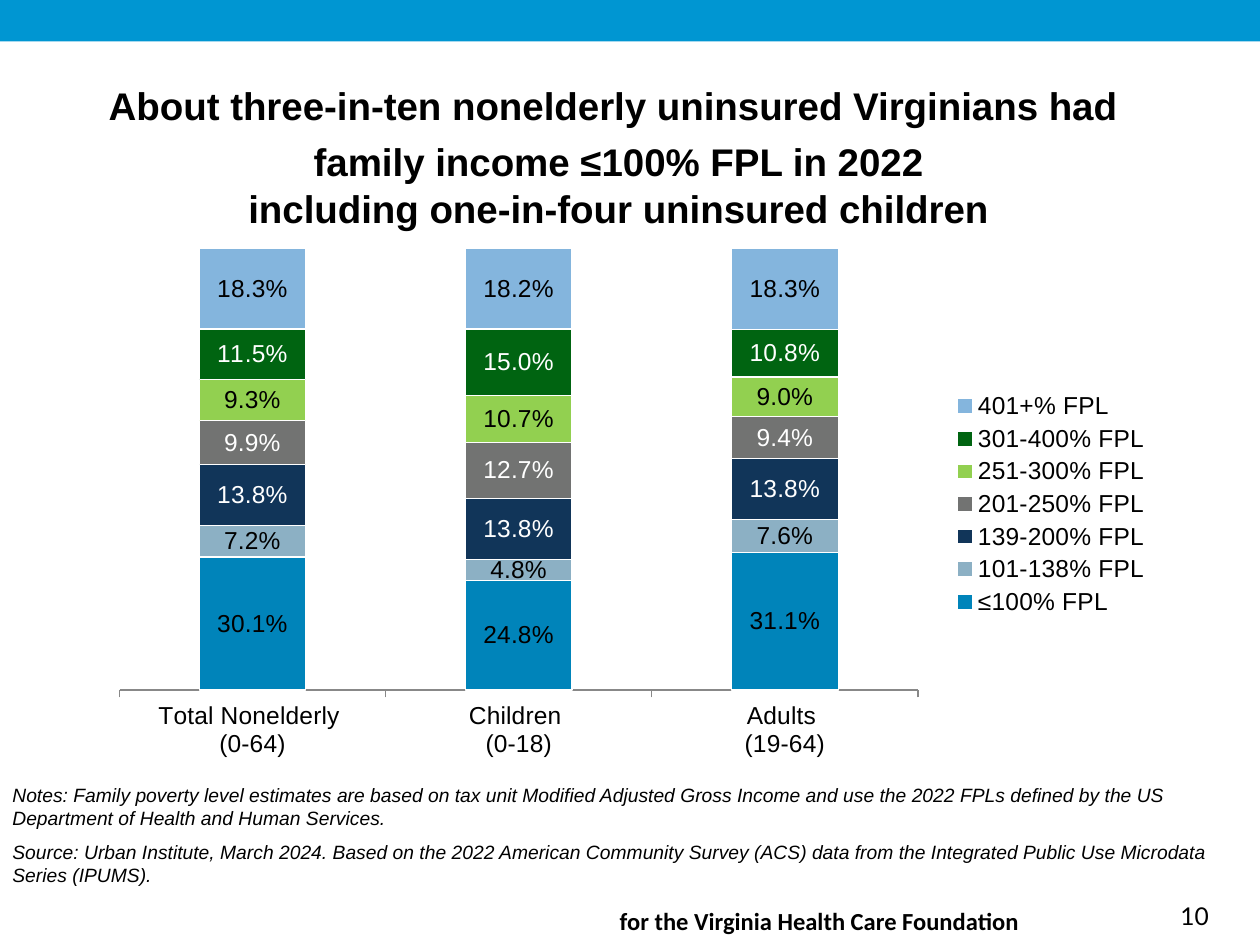
import lxml.etree
import pptx
import pptx.chart.data
import pptx.dml.color
import pptx.enum.chart
import pptx.enum.shapes
import pptx.enum.text
import pptx.oxml.ns
import pptx.util

RGB = pptx.dml.color.RGBColor
BLACK = RGB(0x00, 0x00, 0x00)
WHITE = RGB(0xFF, 0xFF, 0xFF)
BANNER = RGB(0x00, 0x96, 0xD2)
AXIS = RGB(0x88, 0x88, 0x88)
BLUE = RGB(0x00, 0x84, 0xBA)
MIST = RGB(0x8C, 0xB0, 0xC4)
NAVY = RGB(0x11, 0x35, 0x59)
GRAY = RGB(0x72, 0x73, 0x72)
LIME = RGB(0x92, 0xD0, 0x50)
GREEN = RGB(0x00, 0x64, 0x11)
SKY = RGB(0x84, 0xB5, 0xDD)

COLUMNS, ROWS = 100, 75

CATEGORIES = ["Total Nonelderly \n(0-64)", "Children \n(0-18)", "Adults \n(19-64)"]
INCOME_BANDS = [
    ("≤100% FPL", (0.301, 0.248, 0.311), BLUE, BLACK),
    ("101-138% FPL", (0.072, 0.048, 0.076), MIST, BLACK),
    ("139-200% FPL", (0.138, 0.138, 0.138), NAVY, WHITE),
    ("201-250% FPL", (0.099, 0.127, 0.094), GRAY, WHITE),
    ("251-300% FPL", (0.093, 0.107, 0.09), LIME, BLACK),
    ("301-400% FPL", (0.115, 0.15, 0.108), GREEN, WHITE),
    ("401+% FPL", (0.183, 0.182, 0.183), SKY, BLACK),
]


def style_font(font, size=14, name="Arial", color=BLACK, bold=False, italic=False):
    font.size = pptx.util.Pt(size)
    font.name = name
    font.bold = bold
    font.italic = italic
    font.color.rgb = color


def write_text(para, text, align=None, before=0, **font_format):
    para.text = text
    para.alignment = align
    para.space_before = pptx.util.Pt(before)
    for span in para.runs:
        style_font(span.font, **font_format)


def place_plot(chart, **shares):
    qn = pptx.oxml.ns.qn
    area = chart._chartSpace.find(".//" + qn("c:plotArea"))
    layout = area.find(qn("c:layout"))
    if layout is None:
        layout = lxml.etree.Element(qn("c:layout"))
        area.insert(0, layout)
    manual = lxml.etree.SubElement(layout, qn("c:manualLayout"))
    settings = {"layoutTarget": "inner", "xMode": "edge", "yMode": "edge", **shares}
    for tag, value in settings.items():
        lxml.etree.SubElement(manual, qn("c:" + tag)).set("val", str(value))


class SlideBuilder:
    def __init__(self, deck):
        self.cell_width = deck.slide_width / COLUMNS
        self.cell_height = deck.slide_height / ROWS
        self.page = deck.slides.add_slide(deck.slide_layouts[6])

    def area(self, column, row, columns, rows):
        return (
            int(column * self.cell_width),
            int(row * self.cell_height),
            int(columns * self.cell_width),
            int(rows * self.cell_height),
        )

    def bar(self, *cells, color):
        shape = self.page.shapes.add_shape(
            pptx.enum.shapes.MSO_SHAPE.RECTANGLE, *self.area(*cells)
        )
        shape.shadow.inherit = False
        shape.fill.solid()
        shape.fill.fore_color.rgb = color
        shape.line.fill.background()

    def text(self, *cells, lines, gap=0, **text_format):
        box = self.page.shapes.add_textbox(*self.area(*cells))
        frame = box.text_frame
        frame.word_wrap = True
        for index, line in enumerate(lines):
            para = frame.add_paragraph() if index else frame.paragraphs[0]
            write_text(para, line, before=gap if index else 0, **text_format)

    def stacked_chart(self, *cells, categories, bands):
        data = pptx.chart.data.CategoryChartData(number_format="0.0%")
        data.categories = categories
        for name, values, _, _ in bands:
            data.add_series(name, values)
        kind = pptx.enum.chart.XL_CHART_TYPE.COLUMN_STACKED
        chart = self.page.shapes.add_chart(kind, *self.area(*cells), data).chart
        style_font(chart.font)
        chart.has_title = False
        chart.has_legend = True
        chart.legend.position = pptx.enum.chart.XL_LEGEND_POSITION.RIGHT
        chart.legend.include_in_layout = False
        style_font(chart.legend.font)
        self.style_axes(chart)
        plot = chart.plots[0]
        plot.gap_width = 150
        plot.overlap = 100
        plot.vary_by_categories = False
        for series, (_, _, color, label_color) in zip(plot.series, bands):
            self.style_series(series, color, label_color)
        place_plot(chart, x=0.02, y=0.02, w=0.75, h=0.83)

    def style_axes(self, chart):
        marks = pptx.enum.chart.XL_TICK_MARK
        category = chart.category_axis
        category.major_tick_mark = marks.OUTSIDE
        category.format.line.color.rgb = AXIS
        category.format.line.width = pptx.util.Pt(0.75)
        style_font(category.tick_labels.font)
        value = chart.value_axis
        value.minimum_scale = 0
        value.maximum_scale = 1
        value.major_unit = 0.25
        value.has_major_gridlines = False
        value.visible = False

    def style_series(self, series, color, label_color):
        series.format.fill.solid()
        series.format.fill.fore_color.rgb = color
        series.format.line.color.rgb = WHITE
        series.format.line.width = pptx.util.Pt(0.75)
        labels = series.data_labels
        labels.show_value = True
        labels.number_format = "0.0%"
        labels.number_format_is_linked = False
        labels.position = pptx.enum.chart.XL_LABEL_POSITION.CENTER
        style_font(labels.font, color=label_color)


def main():
    deck = pptx.Presentation()
    deck.slide_width = pptx.util.Inches(10)
    deck.slide_height = pptx.util.Inches(7.5)
    slide = SlideBuilder(deck)
    slide.bar(0, 0, COLUMNS, 3.3, color=BANNER)
    slide.text(92.7, 71, 7.3, 3.4, lines=["10"], name="Lato")
    slide.text(
        0, 6, 98.2, 13,
        lines=[
            "About three-in-ten nonelderly uninsured Virginians had ",
            "family income ≤100% FPL in 2022\vincluding one-in-four uninsured children",
        ],
        gap=6, size=22, bold=True, align=pptx.enum.text.PP_ALIGN.CENTER,
    )
    slide.text(
        0, 61.7, COLUMNS, 9.3,
        lines=[
            "Notes: Family poverty level estimates are based on tax unit Modified Adjusted "
            "Gross Income and use the 2022 FPLs defined by the US Department of Health "
            "and Human Services.",
            "Source: Urban Institute, March 2024. Based on the 2022 American Community "
            "Survey (ACS) data from the Integrated Public Use Microdata Series (IPUMS).",
        ],
        gap=6, size=11, italic=True,
    )
    slide.stacked_chart(
        7.8, 18.9, 84.5, 42.2, categories=CATEGORIES, bands=INCOME_BANDS
    )
    slide.text(
        48.2, 71.4, 48.5, 2.6,
        lines=["for the Virginia Health Care Foundation"], name="Calibri", bold=True,
    )
    deck.save("out.pptx")


if __name__ == "__main__":
    main()
